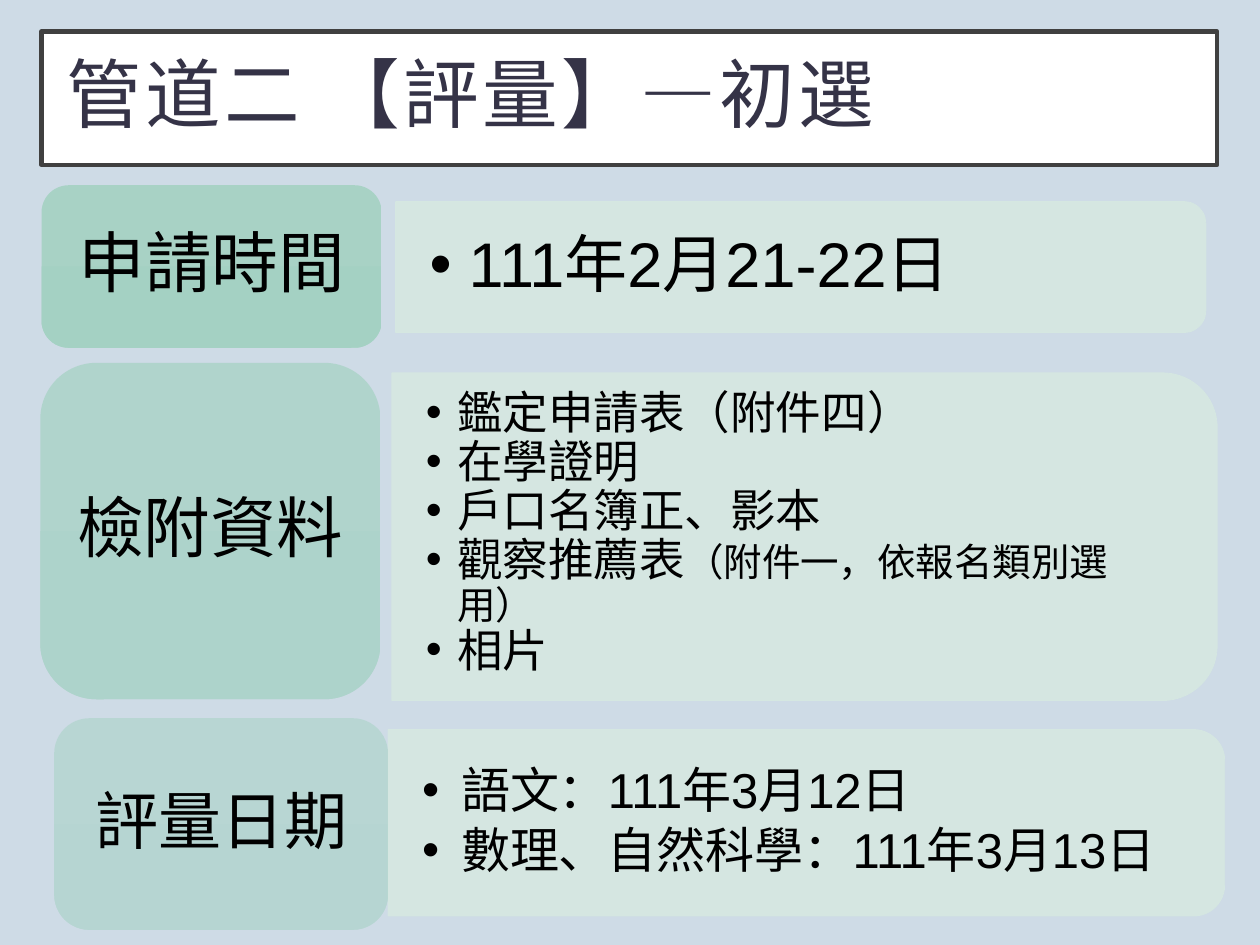
"""Build the slide on the schedule and documents for the first selection round."""
from lxml.etree import SubElement
from pptx import Presentation
from pptx.dml.color import RGBColor
from pptx.enum.shapes import MSO_SHAPE
from pptx.enum.text import MSO_ANCHOR, PP_ALIGN
from pptx.oxml.ns import qn
from pptx.util import Inches, Pt


def color(value):
    return RGBColor.from_string(value)


def add_text(frame, paragraphs, margins, size, align, spacing, after, indent=0):
    frame_format = {
        "word_wrap": True, "vertical_anchor": MSO_ANCHOR.MIDDLE,
        "margin_left": Inches(margins[0]), "margin_right": Inches(margins[0]),
        "margin_top": Inches(margins[1]), "margin_bottom": Inches(margins[1]),
    }
    for name, value in frame_format.items():
        setattr(frame, name, value)
    for index, runs in enumerate(paragraphs):
        paragraph = frame.add_paragraph() if index else frame.paragraphs[0]
        paragraph_format = {"alignment": align, "line_spacing": spacing, "space_after": Pt(after * size)}
        for name, value in paragraph_format.items():
            setattr(paragraph, name, value)
        if indent:
            properties = paragraph.runs and None or paragraph._p.get_or_add_pPr()
            properties.set("marL", str(Inches(indent)))
            properties.set("indent", str(-Inches(indent)))
            SubElement(properties, qn("a:buFont"), typeface="Arial")
            SubElement(properties, qn("a:buChar"), char="•")
        for text, run_size in runs:
            run = paragraph.add_run()
            run.text = text
            run.font.name = "Arial"
            run.font.size = Pt(run_size)
            run.font.color.rgb = color("000000")


presentation = Presentation()
presentation.slide_width = Inches(10)
presentation.slide_height = Inches(7.5)
slide = presentation.slides.add_slide(presentation.slide_layouts[6])
slide.background.fill.solid()
slide.background.fill.fore_color.rgb = color("CEDBE6")
shapes = slide.shapes

title = shapes.add_shape(MSO_SHAPE.RECTANGLE, Inches(0.33), Inches(0.25), Inches(9.33), Inches(1.06))
title.shadow.inherit = False
title.fill.solid()
title.fill.fore_color.rgb = color("FFFFFF")
title.line.color.rgb = color("404040")
title.line.width = Pt(2.5)
add_text(title.text_frame, [[("管道二 【評量】—初選", 43.2)]], (0.2, 0.2), 43.2, PP_ALIGN.LEFT, 0.9, 0)
title_run = title.text_frame.paragraphs[0].runs[0]
title_run.font.name = "Cabin"
title_run.font.color.rgb = color("353347")
title_run.font._element.set("spc", "200")

rows = [
    {
        "label": "申請時間", "label_size": 38, "label_box": (0.33, 1.47, 2.7, 1.29), "label_inset": 0.06,
        "label_margins": (0.16, 0.08), "alpha": 90, "panel_box": (3.14, 1.6, 6.43, 1.04), "panel_inset": 0.05,
        "size": 36, "indent": 0.31, "spacing": 0.9, "items": [[("111年2月21-22日", 36)]],
    },
    {
        "label": "檢附資料", "label_size": 38, "label_box": (0.32, 2.88, 2.7, 2.67), "label_inset": 0.13,
        "label_margins": (0.16, 0.08), "alpha": 70, "panel_box": (3.11, 2.96, 6.55, 2.6), "panel_inset": 0.13,
        "size": 26, "indent": 0.25, "spacing": Pt(24),
        "items": [
            [("鑑定申請表（附件四）", 26)],
            [("在學證明", 26)],
            [("戶口名簿正、影本", 26)],
            [("觀察推薦表", 26), ("（附件一，依報名類別選用）", 22)],
            [("相片", 26)],
        ],
    },
    {
        "label": "評量日期", "label_size": 36, "label_box": (0.43, 5.7, 2.65, 1.68), "label_inset": 0.08,
        "label_margins": (0.15, 0.07), "alpha": 50, "panel_box": (3.08, 5.79, 6.64, 1.48), "panel_inset": 0.07,
        "size": 28, "indent": 0.31, "spacing": 0.9,
        "items": [[("語文：111年3月12日", 28)], [("數理、自然科學：111年3月13日", 28)]],
    },
]

for row in rows:
    left, top, width, height = row["panel_box"]
    panel = shapes.add_shape(
        MSO_SHAPE.ROUND_2_SAME_RECTANGLE,
        Inches(left + (width - height) / 2), Inches(top + (height - width) / 2),
        Inches(height), Inches(width),
    )
    panel.rotation = 90
    panel.fill.solid()
    panel.fill.fore_color.rgb = color("D6E8E1")
    panel.line.color.rgb = color("D6E8E1")
    panel.line.width = Pt(0.5)

    inset = row["panel_inset"]
    panel_text = shapes.add_textbox(
        Inches(left), Inches(top + inset), Inches(width - inset), Inches(height - 2 * inset)
    )
    add_text(panel_text.text_frame, row["items"], (0.27, 0.14), row["size"],
             PP_ALIGN.LEFT, row["spacing"], 0.15, row["indent"])

    left, top, width, height = row["label_box"]
    label = shapes.add_shape(
        MSO_SHAPE.ROUNDED_RECTANGLE, Inches(left), Inches(top), Inches(width), Inches(height)
    )
    label.fill.gradient()
    label.fill.gradient_angle = 270
    for stop, value, position in zip(label.fill.gradient_stops, ("A4D2C2", "A0D1C0"), (0, 1)):
        stop.color.rgb = color(value)
        stop.position = position
    label.line.fill.background()

    for shape, alpha in ((panel, 90), (label, row["alpha"])):
        shape.shadow.inherit = False
        for element in shape._element.spPr.iter(qn("a:srgbClr")):
            SubElement(element, qn("a:alpha"), val=str(alpha * 1000))

    inset = row["label_inset"]
    label_text = shapes.add_textbox(
        Inches(left + inset), Inches(top + inset), Inches(width - 2 * inset), Inches(height - 2 * inset)
    )
    add_text(label_text.text_frame, [[(row["label"], row["label_size"])]], row["label_margins"],
             row["label_size"], PP_ALIGN.CENTER, 0.9, 0.35)

presentation.save("out.pptx")
